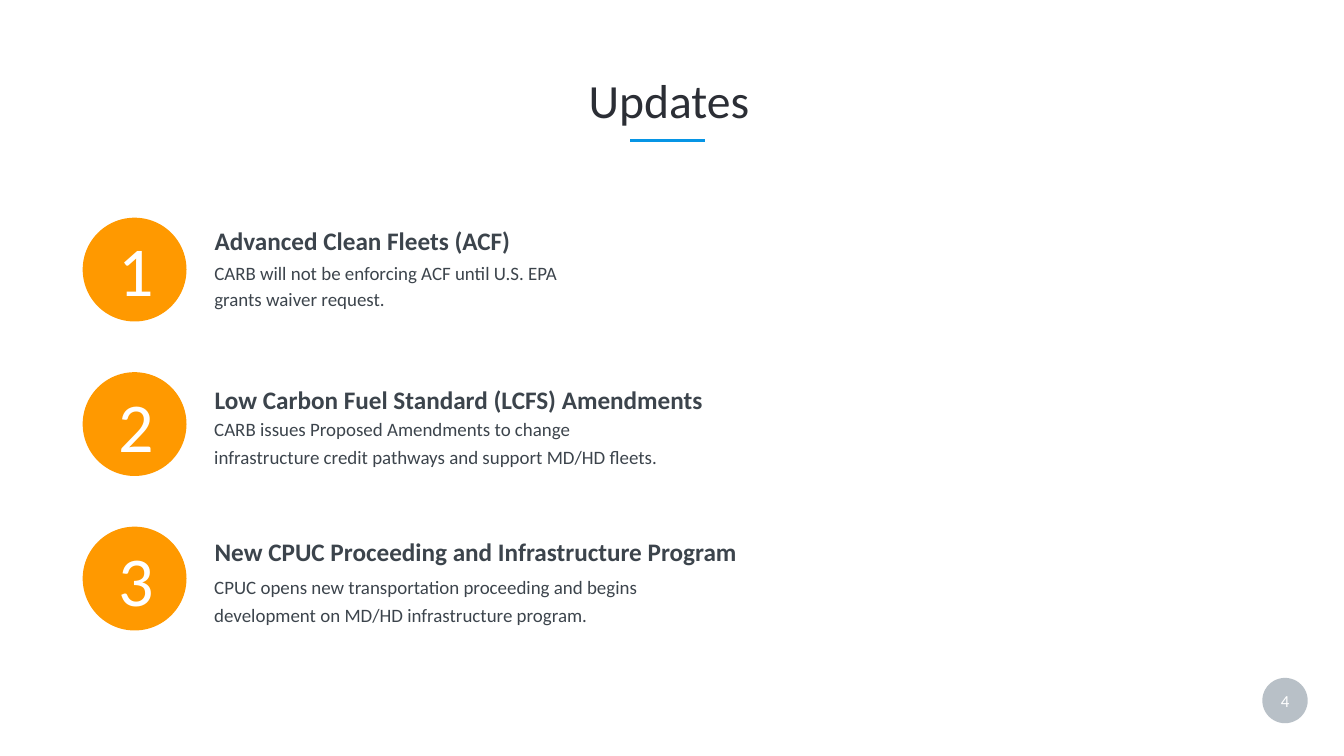
import pptx
import pptx.util
import pptx.dml.color
import pptx.enum.shapes
import pptx.enum.text
import pptx.oxml.ns
import lxml.etree

Pt = pptx.util.Pt
Align = pptx.enum.text.PP_ALIGN
Anchor = pptx.enum.text.MSO_ANCHOR
Fit = pptx.enum.text.MSO_AUTO_SIZE
Kind = pptx.enum.shapes.MSO_SHAPE

COLORS = {"orange": "FF9900", "blue": "0695E5", "gray": "ABB4BD",
          "title": "2B2E35", "text": "3C444C", "white": "FFFFFF"}


def write(box, text, size, color, frame_format, para_format, bold=False):
    """Fill a text shape with one formatted paragraph and return its run."""
    frame = box.text_frame
    for name, value in frame_format.items():
        setattr(frame, name, value)
    para = frame.paragraphs[0]
    for name, value in para_format.items():
        setattr(para, name, value)
    span = para.add_run()
    span.text = text
    for name, value in {"name": "Calibri", "size": Pt(size), "bold": bold}.items():
        setattr(span.font, name, value)
    span.font.color.rgb = pptx.dml.color.RGBColor.from_string(COLORS[color])
    return span


def add_circle(left, top, size, color):
    circle = page.shapes.add_shape(Kind.OVAL, Pt(left), Pt(top), Pt(size), Pt(size))
    circle.shadow.inherit = False
    circle.fill.solid()
    circle.fill.fore_color.rgb = pptx.dml.color.RGBColor.from_string(COLORS[color])
    circle.line.fill.background()
    return circle


deck = pptx.Presentation()
deck.slide_width, deck.slide_height = Pt(1919.52), Pt(1080)
page = deck.slides.add_slide(deck.slide_layouts[5])

# Title and its underline
title = page.shapes.title
title.left, title.top, title.width, title.height = Pt(108), Pt(59), Pt(1694.9), Pt(128.9)
write(title, "Updates", 68, "title",
      {"vertical_anchor": Anchor.BOTTOM, "word_wrap": True, "auto_size": Fit.NONE},
      {"alignment": Align.CENTER, "line_spacing": 0.9})

underline = page.shapes.add_connector(
    pptx.enum.shapes.MSO_CONNECTOR.STRAIGHT, Pt(900), Pt(200.9), Pt(1007.3), Pt(200.9))
underline.line.width = Pt(3.6)
underline.line.color.rgb = pptx.dml.color.RGBColor.from_string(COLORS["blue"])
lxml.etree.SubElement(underline._element.spPr, pptx.oxml.ns.qn("a:effectLst"))

# Numbered updates: heading, detail, tops of number, heading and detail,
# widths of heading and detail, line pitch of the detail
updates = [
    ("Advanced Clean Fleets (ACF)",
     "CARB will not be enforcing ACF until U.S. EPA grants waiver request.",
     323.3, 294.5, 361.4, 579.6, 579.6, 36.4),
    ("Low Carbon Fuel Standard (LCFS) Amendments",
     "CARB issues Proposed Amendments to change infrastructure credit pathways "
     "and support MD/HD fleets.",
     545.8, 522, 580.3, 727.9, 681.1, 40),
    ("New CPUC Proceeding and Infrastructure Program",
     "CPUC opens new transportation proceeding and begins development on "
     "MD/HD infrastructure program.",
     766.8, 739.4, 806.4, 809.3, 643, 40),
]
number_frame = {"margin_left": Pt(7.2), "margin_right": 0, "margin_top": 0,
                "margin_bottom": 0, "word_wrap": False,
                "auto_size": Fit.SHAPE_TO_FIT_TEXT}
heading_frame = {"vertical_anchor": Anchor.MIDDLE, "word_wrap": True,
                 "auto_size": Fit.SHAPE_TO_FIT_TEXT}
detail_frame = {"margin_left": Pt(17.3), "margin_right": Pt(17.3),
                "margin_top": Pt(8.6), "margin_bottom": Pt(8.6),
                "word_wrap": True, "auto_size": Fit.SHAPE_TO_FIT_TEXT}

for index, update in enumerate(updates):
    (heading, detail, number_top, heading_top, detail_top,
     heading_width, detail_width, pitch) = update
    add_circle(118.1, 311 + index * 220.7, 148.3, "orange")

    box = page.shapes.add_textbox(Pt(159.8), Pt(number_top), Pt(62.6), Pt(121))
    span = write(box, str(index + 1), 100, "white", number_frame,
                 {"alignment": Align.CENTER})
    span._r.get_or_add_rPr().set("spc", "400")

    box = page.shapes.add_textbox(Pt(299.5), Pt(heading_top), Pt(heading_width), Pt(70.6))
    write(box, heading, 36, "text", heading_frame, {"line_spacing": Pt(70.6)}, bold=True)

    box = page.shapes.add_textbox(Pt(288.7), Pt(detail_top), Pt(detail_width),
                                  Pt(2 * pitch + 17.2))
    write(box, detail, 27, "text", detail_frame, {"line_spacing": Pt(pitch)})

# Page number on a translucent badge
badge = add_circle(1802.9, 968.4, 64.8, "gray")
tint = badge._element.spPr.find(".//" + pptx.oxml.ns.qn("a:srgbClr"))
lxml.etree.SubElement(tint, pptx.oxml.ns.qn("a:alpha"), val="84000")
box = page.shapes.add_textbox(Pt(1802.9), Pt(972), Pt(64.8), Pt(57.6))
write(box, "4", 24, "white",
      {"vertical_anchor": Anchor.MIDDLE, "word_wrap": True},
      {"alignment": Align.CENTER})

deck.save("out.pptx")
